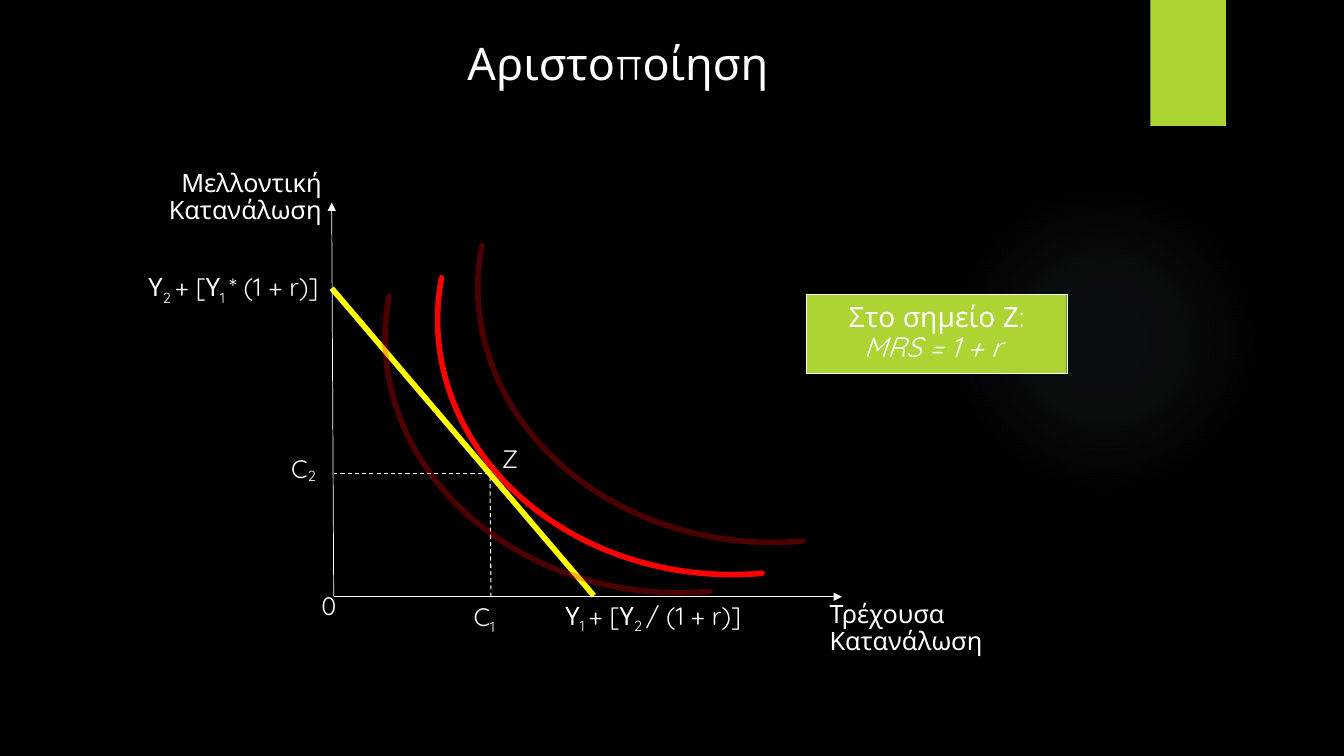
from dataclasses import dataclass

from pptx import Presentation
from pptx.dml.color import RGBColor
from pptx.enum.dml import MSO_LINE
from pptx.enum.shapes import MSO_CONNECTOR, MSO_SHAPE
from pptx.enum.text import MSO_ANCHOR, PP_ALIGN
from pptx.oxml import parse_xml
from pptx.oxml.ns import nsdecls
from pptx.oxml.xmlchemy import OxmlElement
from pptx.shapes.autoshape import Shape
from pptx.slide import Slide
from pptx.text.text import TextFrame
from pptx.util import Inches, Pt

BLACK = RGBColor(0x00, 0x00, 0x00)
WHITE = RGBColor(0xFF, 0xFF, 0xFF)
GREEN = RGBColor(0xAC, 0xD4, 0x33)
YELLOW = RGBColor(0xFF, 0xFF, 0x00)
RED = RGBColor(0xFF, 0x00, 0x00)
GLOW = RGBColor(0x7A, 0xC4, 0xF0)
FONT = "Quicksand"
LEFT, CENTER, RIGHT = PP_ALIGN.LEFT, PP_ALIGN.CENTER, PP_ALIGN.RIGHT
TOP, MIDDLE = MSO_ANCHOR.TOP, MSO_ANCHOR.MIDDLE
DASH = MSO_LINE.DASH
RECT, OVAL, ARC = MSO_SHAPE.RECTANGLE, MSO_SHAPE.OVAL, MSO_SHAPE.ARC
STRAIGHT = MSO_CONNECTOR.STRAIGHT


@dataclass
class Label:
    text: str
    left: float
    top: float
    width: float
    height: float
    align: PP_ALIGN = LEFT
    wrap: bool = True
    base: int = -25


@dataclass
class Line:
    x1: float
    y1: float
    x2: float
    y2: float
    color: RGBColor
    width: float
    dashed: bool = False
    arrow: bool = False


@dataclass
class Curve:
    left: float
    top: float
    alpha: int = 100


LABELS = [
    Label("Υ|2 |+ [Υ|1 |* (1 + r)]", 1.29, 2.65, 2.05, 0.4, CENTER, False),
    Label("Υ|1 |+ [Υ|2 |/ (1 + r)]", 5.45, 5.91, 2.06, 0.4, CENTER, False),
    Label("Τρέχουσα\nΚατανάλωση", 8.13, 5.92, 1.86, 0.48),
    Label("Μελλοντική\nΚατανάλωση", 0.23, 1.64, 3.06, 0.68, RIGHT),
    Label("Z", 4.88, 4.38, 0.35, 0.38),
    Label("C|2", 2.79, 4.48, 0.62, 0.71, base=-10),
    Label("C|1", 4.6, 5.92, 0.53, 0.43),
    Label("0", 3.09, 5.84, 0.45, 0.43),
]
LINES = [
    Line(4.85, 4.7, 3.31, 4.7, WHITE, 0.75, dashed=True),
    Line(4.87, 5.92, 4.86, 4.7, WHITE, 0.75, dashed=True),
    Line(3.29, 2.86, 5.89, 5.91, YELLOW, 4),
    Line(3.31, 5.92, 8.35, 5.92, WHITE, 0.5, arrow=True),
    Line(3.31, 5.92, 3.29, 2.01, WHITE, 0.5, arrow=True),
]
CURVES = [Curve(4.34, 0.64), Curve(4.74, 0.32, 30), Curve(3.82, 0.82, 30)]


def write(frame: TextFrame, text: str, size: int, align: PP_ALIGN,
          base: int = 0, space: float = 0.9) -> None:
    for num, row in enumerate(text.split("\n")):
        para = frame.paragraphs[0] if num == 0 else frame.add_paragraph()
        para.alignment = align
        para.line_spacing = space
        for pos, part in enumerate(row.split("|")):
            run = para.add_run()
            run.text = part
            run.font.name = FONT
            run.font.size = Pt(size)
            run.font.color.rgb = WHITE
            if pos % 2:
                run.font._element.set("baseline", str(base * 1000))


def add_label(slide: Slide, label: Label) -> None:
    box = slide.shapes.add_textbox(Inches(label.left), Inches(label.top),
                                   Inches(label.width), Inches(label.height))
    box.text_frame.word_wrap = label.wrap
    write(box.text_frame, label.text, 18, label.align, label.base)


def add_line(slide: Slide, line: Line) -> None:
    link = slide.shapes.add_connector(STRAIGHT, Inches(line.x1), Inches(line.y1),
                                      Inches(line.x2), Inches(line.y2))
    link.line.color.rgb = line.color
    link.line.width = Pt(line.width)
    if line.dashed:
        link.line.dash_style = DASH
    if line.arrow:
        tail = OxmlElement("a:tailEnd")
        tail.set("type", "triangle")
        link.line._get_or_add_ln().append(tail)
    link._element.spPr.append(OxmlElement("a:effectLst"))


def add_shape(slide: Slide, kind: MSO_SHAPE, left: float, top: float,
              width: float, height: float) -> Shape:
    shape = slide.shapes.add_shape(kind, Inches(left), Inches(top),
                                   Inches(width), Inches(height))
    shape.shadow.inherit = False
    shape.line.fill.background()
    return shape


def add_block(slide: Slide, left: float, top: float,
              width: float, height: float) -> Shape:
    block = add_shape(slide, RECT, left, top, width, height)
    block.fill.solid()
    block.fill.fore_color.rgb = GREEN
    return block


def add_curve(slide: Slide, curve: Curve) -> None:
    arc = add_shape(slide, ARC, curve.left, curve.top, 5.84, 5.06)
    arc.rotation = 180
    arc.adjustments[0] = 157.95
    arc.adjustments[1] = 4.92
    arc.fill.background()
    arc.line.color.rgb = RED
    arc.line.width = Pt(4)
    pen = arc.line._get_or_add_ln()
    pen.set("cap", "rnd")
    if curve.alpha < 100:
        alpha = OxmlElement("a:alpha")
        alpha.set("val", str(curve.alpha * 1000))
        pen.find(".//{*}srgbClr").append(alpha)


def add_glow(slide: Slide) -> None:
    oval = add_shape(slide, OVAL, 9.41, 1.83, 3.08, 3.08)
    stops = "".join(
        f'<a:gs pos="{pos * 1000}"><a:srgbClr val="{GLOW}">'
        f'<a:alpha val="{alpha * 1000}"/></a:srgbClr></a:gs>'
        for pos, alpha in ((0, 7), (36, 6), (69, 0), (100, 0)))
    fill = parse_xml(
        f'<a:gradFill {nsdecls("a")}><a:gsLst>{stops}</a:gsLst>'
        '<a:path path="circle"><a:fillToRect l="50000" t="50000" '
        'r="50000" b="50000"/></a:path></a:gradFill>')
    oval._element.spPr.insert(2, fill)


def add_title(slide: Slide) -> None:
    title = slide.shapes.title
    title.left, title.top = Inches(1.01), Inches(0.3)
    title.width, title.height = Inches(10.24), Inches(1.12)
    title.text_frame.vertical_anchor = TOP
    write(title.text_frame, "Αριστοποίηση", 32, CENTER, space=1.0)


def add_note(slide: Slide) -> None:
    note = add_block(slide, 8, 2.92, 2.58, 0.78)
    note.line.color.rgb = WHITE
    note.line.width = Pt(0.25)
    frame = note.text_frame
    frame.word_wrap = True
    frame.vertical_anchor = MIDDLE
    write(frame, "Στο σημείο Ζ:\nMRS = 1 + r ", 20, CENTER)
    frame.paragraphs[1].runs[0].font.italic = True


def main() -> None:
    deck = Presentation()
    deck.slide_width, deck.slide_height = Inches(13.33), Inches(7.5)
    slide = deck.slides.add_slide(deck.slide_layouts[5])
    slide.background.fill.solid()
    slide.background.fill.fore_color.rgb = BLACK
    add_glow(slide)
    add_block(slide, 11.41, 0, 0.75, 1.25)
    add_title(slide)
    for line in LINES:
        add_line(slide, line)
    for label in LABELS:
        add_label(slide, label)
    for curve in CURVES:
        add_curve(slide, curve)
    add_note(slide)
    deck.save("out.pptx")


if __name__ == "__main__":
    main()
